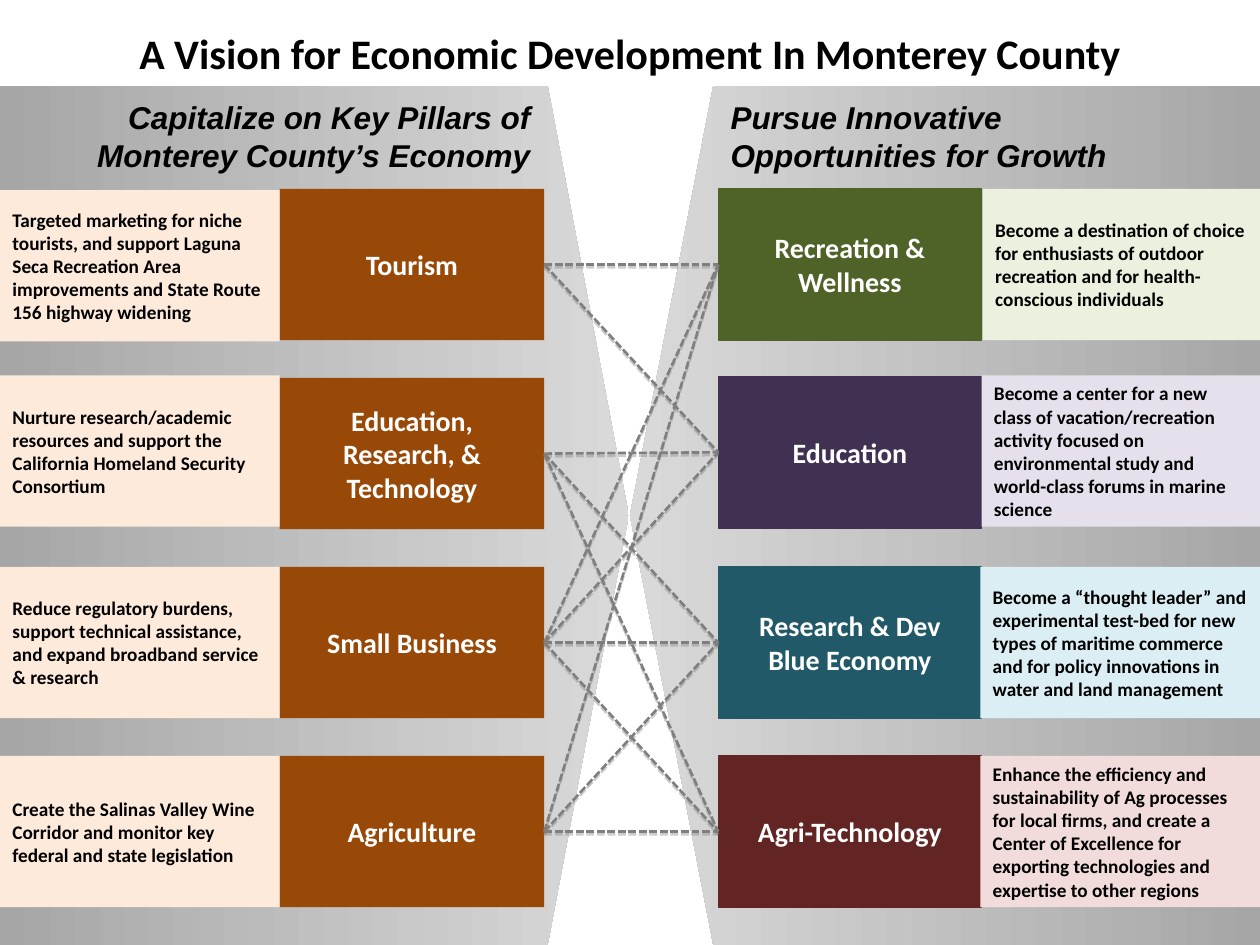
from lxml.etree import SubElement
from pptx import Presentation
from pptx.dml.color import RGBColor
from pptx.enum.dml import MSO_LINE as Dash
from pptx.enum.shapes import MSO_CONNECTOR as Link, MSO_SHAPE as Kind
from pptx.enum.text import MSO_ANCHOR as Anchor, MSO_AUTO_SIZE as Fit, PP_ALIGN as Align
from pptx.oxml.ns import qn
from pptx.util import Inches, Pt

BLACK = RGBColor(0x00, 0x00, 0x00)
WHITE = RGBColor(0xFF, 0xFF, 0xFF)
DARK = RGBColor(0xA6, 0xA6, 0xA6)
LIGHT = RGBColor(0xD9, 0xD9, 0xD9)
GRAY = RGBColor(0x7F, 0x7F, 0x7F)
BROWN = RGBColor(0x98, 0x48, 0x07)
PEACH = RGBColor(0xFD, 0xEA, 0xDA)
GREEN = RGBColor(0x4F, 0x62, 0x28)
PURPLE = RGBColor(0x40, 0x31, 0x52)
TEAL = RGBColor(0x21, 0x59, 0x68)
RED = RGBColor(0x63, 0x25, 0x23)
MINT = RGBColor(0xEB, 0xF1, 0xDE)
LILAC = RGBColor(0xE6, 0xE0, 0xEC)
SKY = RGBColor(0xDB, 0xEE, 0xF4)
ROSE = RGBColor(0xF2, 0xDC, 0xDB)

TITLE = {"name": "Calibri", "size": Pt(24), "bold": True}
HEAD = {"name": "Arial", "size": Pt(18), "bold": True, "italic": True}
LABEL = {"name": "Calibri", "size": Pt(16), "bold": True}
NOTE = {"name": "Calibri", "size": Pt(11), "bold": True}

PILLARS = [
    ("Tourism", 1.51,
     "Targeted marketing for niche tourists, and support Laguna Seca Recreation Area "
     "improvements and State Route 156 highway widening"),
    ("Education, Research, & Technology", 2.98,
     "Nurture research/academic resources and support the California Homeland Security "
     "Consortium"),
    ("Small Business", 4.5,
     "Reduce regulatory burdens, support technical assistance, and expand broadband "
     "service & research"),
    ("Agriculture", 6,
     "Create the Salinas Valley Wine Corridor and monitor key federal and state legislation"),
]
GOALS = [
    ("Recreation & Wellness", GREEN, 1.5, MINT, 7.8, 1.5,
     "Become a destination of choice for enthusiasts of outdoor recreation and for "
     "health-conscious individuals"),
    ("Education", PURPLE, 2.99, LILAC, 7.79, 2.98,
     "Become a center for a new class of vacation/recreation activity focused on "
     "environmental study and world-class forums in marine science"),
    ("Research & Dev\nBlue Economy", TEAL, 4.5, SKY, 7.78, 4.5,
     "Become a “thought leader” and experimental test-bed for new types of maritime "
     "commerce and for policy innovations in water and land management"),
    ("Agri-Technology", RED, 6, ROSE, 7.78, 6,
     "Enhance the efficiency and sustainability of Ag processes for local firms, and "
     "create a Center of Excellence for exporting technologies and expertise to other "
     "regions"),
]
LINKS = [(0, 1), (2, 1, 3), (0, 1, 2, 3), (2, 3, 0)]
LINKS[1] = (2, 1, 3)


def write(frame, text, style, color, align, anchor=Anchor.MIDDLE):
    """Fill a text frame with evenly styled paragraphs."""
    frame.text = text
    frame.word_wrap = True
    frame.vertical_anchor = anchor
    for para in frame.paragraphs:
        para.alignment = align
        for key, value in style.items():
            setattr(para.font, key, value)
        para.font.color.rgb = color


def add_title(slide, text):
    """Place the slide title."""
    title = slide.shapes.title
    spot = {"left": 0, "top": 0, "width": Inches(10), "height": Inches(0.83)}
    for key, value in spot.items():
        setattr(title, key, value)
    write(title.text_frame, text, TITLE, BLACK, Align.CENTER)
    title.text_frame.auto_size = Fit.NONE


def add_panel(slide, left, width, adj, flip=False):
    """Draw a shaded pentagon that points to the centre."""
    panel = slide.shapes.add_shape(
        Kind.PENTAGON, Inches(left), Inches(0.68), Inches(width), Inches(6.82))
    panel.adjustments[0] = adj
    panel.shadow.inherit = False
    panel.line.fill.background()
    panel.fill.gradient()
    panel.fill.gradient_angle = 0
    for stop, color, place in zip(panel.fill.gradient_stops, (DARK, LIGHT), (0, 0.99)):
        stop.color.rgb = color
        stop.position = place
    if flip:
        panel.element.spPr.find(qn("a:xfrm")).set("flipH", "1")


def add_head(slide, left, width, text, align):
    """Add the heading of one panel."""
    box = slide.shapes.add_textbox(
        Inches(left), Inches(0.73), Inches(width), Inches(0.71))
    write(box.text_frame, text, HEAD, BLACK, align, Anchor.TOP)
    box.text_frame.auto_size = Fit.SHAPE_TO_FIT_TEXT


def add_box(slide, left, top, width, fill, edge=False):
    """Draw one flat rectangle."""
    box = slide.shapes.add_shape(
        Kind.RECTANGLE, Inches(left), Inches(top), Inches(width), Inches(1.2))
    box.shadow.inherit = False
    box.fill.solid()
    box.fill.fore_color.rgb = fill
    if edge:
        box.line.color.rgb = fill
        box.line.width = Pt(0.75)
    else:
        box.line.fill.background()
    return box


def add_label(slide, left, top, width, fill, text, edge=False):
    """Add a dark box with a centred label."""
    box = add_box(slide, left, top, width, fill, edge)
    write(box.text_frame, text, LABEL, WHITE, Align.CENTER)
    return box


def add_note(slide, left, top, fill, text):
    """Add a pale box with a short note."""
    box = add_box(slide, left, top, 2.22, fill)
    write(box.text_frame, text, NOTE, BLACK, Align.LEFT)


def add_link(slide, start, end):
    """Join two boxes with a dashed, shadowed line."""
    link = slide.shapes.add_connector(Link.STRAIGHT, 0, 0, 0, 0)
    link.begin_connect(start, 3)
    link.end_connect(end, 1)
    look = {"width": Pt(1.5), "dash_style": Dash.SQUARE_DOT}
    link.line.color.rgb = GRAY
    for key, value in look.items():
        setattr(link.line, key, value)
    effect = SubElement(link.element.spPr, qn("a:effectLst"))
    shade = SubElement(effect, qn("a:outerShdw"),
                       blurRad="0", dist="20000", dir="5400000", rotWithShape="0")
    color = SubElement(shade, qn("a:srgbClr"), val="808080")
    SubElement(color, qn("a:alpha"), val="40000")


def main():
    """Build the slide and save it."""
    deck = Presentation()
    deck.slide_width, deck.slide_height = Inches(10), Inches(7.5)
    slide = deck.slides.add_slide(deck.slide_layouts[5])
    add_panel(slide, 5, 5.01, 0.132, True)
    add_panel(slide, 0, 4.99, 0.129)
    add_head(slide, 0.12, 4.19,
             "Capitalize on Key Pillars of Monterey County’s Economy", Align.RIGHT)
    add_head(slide, 5.7, 4.03,
             "Pursue Innovative Opportunities for Growth", Align.LEFT)
    add_title(slide, "A Vision for Economic Development In Monterey County")
    goals = [add_label(slide, 5.7, top, 2.09, fill, name, True)
             for name, fill, top, *_ in GOALS]
    pillars = [add_label(slide, 2.22, 1.5 + 1.5 * row, 2.1, BROWN, name)
               for row, (name, *_) in enumerate(PILLARS)]
    for _, top, text in PILLARS:
        add_note(slide, 0, top, PEACH, text)
    for *_, pale, left, top, text in GOALS:
        add_note(slide, left, top, pale, text)
    for pillar, ends in zip(pillars, LINKS):
        for end in ends:
            add_link(slide, pillar, goals[end])
    deck.save("out.pptx")


if __name__ == "__main__":
    main()
